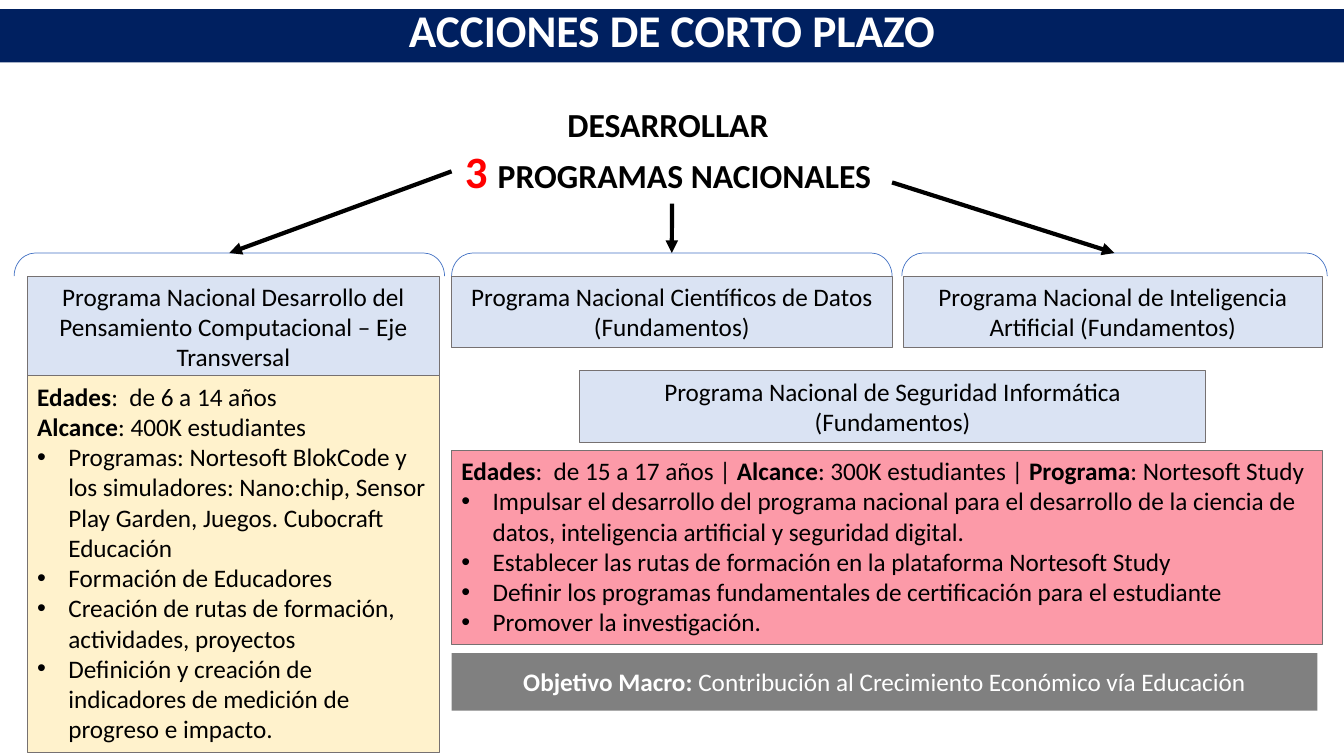
import pptx
import pptx.util
import pptx.dml.color
import pptx.enum.shapes
import pptx.enum.text
import pptx.oxml
import pptx.oxml.ns

RGB = pptx.dml.color.RGBColor
SHAPES = pptx.enum.shapes.MSO_SHAPE
ALIGN = pptx.enum.text.PP_ALIGN
ANCHOR = pptx.enum.text.MSO_ANCHOR
FIT = pptx.enum.text.MSO_AUTO_SIZE

NAVY = RGB(0x00, 0x20, 0x60)
PALE_BLUE = RGB(0xDA, 0xE3, 0xF3)
CREAM = RGB(0xFF, 0xF2, 0xCC)
PINK = RGB(0xFC, 0x9A, 0xA8)
GREY = RGB(0x80, 0x80, 0x80)
EDGE = RGB(0x76, 0x71, 0x71)
BLUE = RGB(0x44, 0x72, 0xC4)
RED = RGB(0xFF, 0x00, 0x00)
BLACK = RGB(0x00, 0x00, 0x00)
WHITE = RGB(0xFF, 0xFF, 0xFF)

WIDTH, HEIGHT = pptx.util.Inches(13.33), pptx.util.Inches(7.5)
COLS, ROWS = 40, 22.5
LEFT, MIDDLE, RIGHT = 0.81, 13.44, 26.88
CARD_TOP, CARD_H = 8.22, 2.13
BRACKET_TOP = 7.53
INDENT = pptx.util.Inches(0.31)


def col(n):
    return round(WIDTH * n / COLS)


def row(n):
    return round(HEIGHT * n / ROWS)


def grid(box):
    x, y, w, h = box
    return col(x), row(y), col(w), row(h)


def apply(obj, **formats):
    for name, value in formats.items():
        setattr(obj, name, value)


def add_paragraph(tf, first, runs, bullet=False, size=18, color=BLACK, **formats):
    p = tf.paragraphs[0] if first else tf.add_paragraph()
    apply(p, **{"alignment": ALIGN.LEFT, **formats})
    if bullet:
        pPr = p._p.get_or_add_pPr()
        pPr.set("marL", str(INDENT))
        pPr.set("indent", str(-INDENT))
        ns = pptx.oxml.ns.nsdecls("a")
        pPr.append(pptx.oxml.parse_xml(f'<a:buFont {ns} typeface="Arial"/>'))
        pPr.append(pptx.oxml.parse_xml(f'<a:buChar {ns} char="•"/>'))
    for text, style in runs:
        r = p.add_run()
        r.text = text
        style = {"name": "Calibri", "size": size, "bold": False, "color": color, **style}
        r.font.color.rgb = style.pop("color")
        style["size"] = pptx.util.Pt(style["size"])
        apply(r.font, **style)


def add_panel(slide, box, fill, paragraphs, edge=EDGE, anchor=ANCHOR.TOP, **formats):
    sp = slide.shapes.add_shape(SHAPES.RECTANGLE, *grid(box))
    sp.shadow.inherit = False
    sp.fill.solid()
    sp.fill.fore_color.rgb = fill
    if edge is None:
        sp.line.fill.background()
    else:
        sp.line.color.rgb = edge
        sp.line.width = pptx.util.Pt(0.75)
    tf = sp.text_frame
    apply(tf, word_wrap=True, vertical_anchor=anchor,
          auto_size=FIT.NONE if edge is None else FIT.SHAPE_TO_FIT_TEXT)
    for i, (runs, bullet) in enumerate(paragraphs):
        add_paragraph(tf, i == 0, runs, bullet, **formats)


def add_card(slide, box, text):
    add_panel(slide, box, PALE_BLUE, [([(text, {})], False)], alignment=ALIGN.CENTER)


def add_banner(slide, box, fill, runs, **formats):
    add_panel(slide, box, fill, [(runs, False)], edge=None, anchor=ANCHOR.MIDDLE,
              alignment=ALIGN.CENTER, color=WHITE, **formats)


def add_details(slide, box, fill, facts, bullets):
    paragraphs = []
    for line in facts:
        runs = [(t, {"bold": i % 2 == 0}) for i, t in enumerate(line)]
        paragraphs.append((runs, False))
    paragraphs += [([(text, {})], True) for text in bullets]
    add_panel(slide, box, fill, paragraphs)


def add_heading(slide, box):
    tf = slide.shapes.add_textbox(*grid(box)).text_frame
    apply(tf, word_wrap=True, auto_size=FIT.SHAPE_TO_FIT_TEXT)
    bold = {"bold": True}
    lines = [[("DESARROLLAR ", bold)],
             [("3 ", {**bold, "size": 32, "color": RED}), ("PROGRAMAS NACIONALES ", bold)]]
    for i, runs in enumerate(lines):
        add_paragraph(tf, i == 0, runs, size=24, alignment=ALIGN.CENTER)


def add_branch(slide, box, start):
    x, y, w, h = grid(box)
    sp = slide.shapes.add_shape(SHAPES.LEFT_BRACKET, x + (w - h) // 2, y + (h - w) // 2, h, w)
    sp.rotation = 90
    sp.adjustments[0] = 0.92
    sp.shadow.inherit = False
    sp.fill.background()
    sp.line.color.rgb = BLUE
    sp.line.width = pptx.util.Pt(0.5)
    arrow = slide.shapes.add_connector(pptx.enum.shapes.MSO_CONNECTOR.STRAIGHT,
                                       col(start[0]), row(start[1]), x + w // 2, y)
    arrow.line.color.rgb = BLACK
    arrow.line.width = pptx.util.Pt(3)
    ns = pptx.oxml.ns.nsdecls("a")
    arrow.line._get_or_add_ln().append(pptx.oxml.parse_xml(f'<a:tailEnd {ns} type="triangle"/>'))
    arrow._element.spPr.append(pptx.oxml.parse_xml(f'<a:effectLst {ns}/>'))


def build_slide(prs):
    slide = prs.slides.add_slide(prs.slide_layouts[6])
    add_banner(slide, (0, 0.27, COLS, 1.59), NAVY,
               [("ACCIONES DE CORTO PLAZO", {"bold": True})], size=32.4, line_spacing=0.7)
    add_heading(slide, (12.18, 2.94, 15.63, 3.12))
    cards = [
        ((LEFT, CARD_TOP, 12.27, 3.03),
         "Programa Nacional Desarrollo del Pensamiento Computacional – Eje Transversal"),
        ((MIDDLE, CARD_TOP, 13.11, CARD_H),
         "Programa Nacional Científicos de Datos (Fundamentos)"),
        ((RIGHT, CARD_TOP, 12.48, CARD_H),
         "Programa Nacional de Inteligencia Artificial (Fundamentos)"),
        ((17.25, 11.04, 18.63, CARD_H),
         "Programa Nacional de Seguridad Informática (Fundamentos)"),
    ]
    for box, text in cards:
        add_card(slide, box, text)
    add_details(slide, (LEFT, 11.19, 12.27, 11.22), CREAM,
                [["Edades", ":  de 6 a 14 años"], ["Alcance", ": 400K estudiantes"]],
                ["Programas: Nortesoft BlokCode y los simuladores: Nano:chip, Sensor "
                 "Play Garden, Juegos. Cubocraft Educación",
                 "Formación de Educadores",
                 "Creación de rutas de formación, actividades, proyectos",
                 "Definición y creación de indicadores de medición de progreso e impacto."])
    add_details(slide, (MIDDLE, 13.41, 25.92, 5.76), PINK,
                [["Edades", ":  de 15 a 17 años | ", "Alcance", ": 300K estudiantes | ",
                  "Programa", ": Nortesoft Study"]],
                ["Impulsar el desarrollo del programa nacional para el desarrollo de la "
                 "ciencia de datos, inteligencia artificial y seguridad digital.",
                 "Establecer las rutas de formación en la plataforma Nortesoft Study",
                 "Definir los programas fundamentales de certificación para el estudiante",
                 "Promover la investigación."])
    add_banner(slide, (MIDDLE, 19.44, 25.77, 1.71), GREY,
               [("Objetivo Macro: ", {"bold": True}),
                ("Contribución al Crecimiento Económico vía Educación", {})])
    branches = [(0.42, 12.81, (13.44, 5.1)), (MIDDLE, 13.11, (20, 6.06)),
                (26.84, 12.66, (26.55, 5.43))]
    for x, w, start in branches:
        add_branch(slide, (x, BRACKET_TOP, w, CARD_TOP - BRACKET_TOP), start)


def main():
    prs = pptx.Presentation()
    apply(prs, slide_width=WIDTH, slide_height=HEIGHT)
    build_slide(prs)
    prs.save("out.pptx")


if __name__ == "__main__":
    main()
